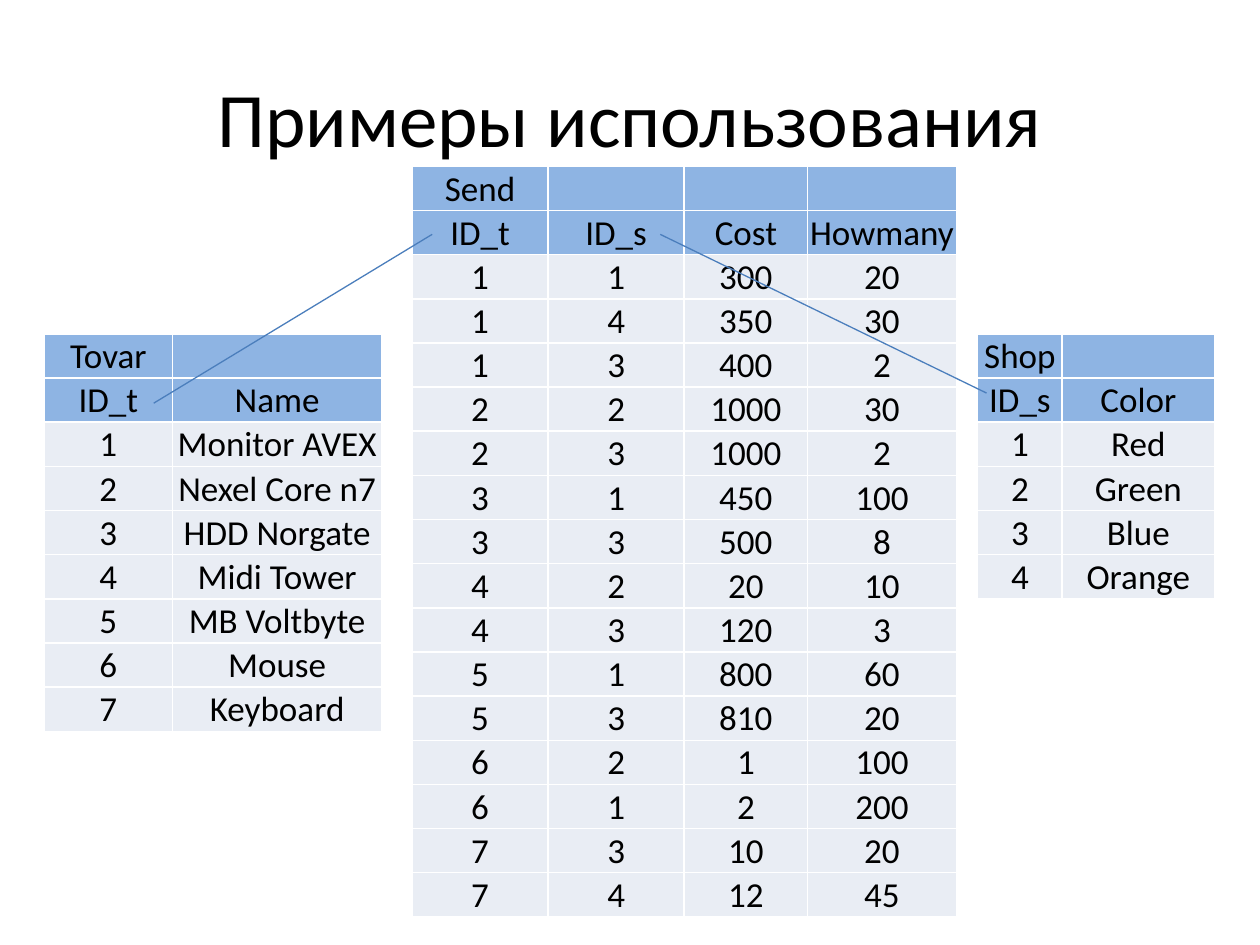
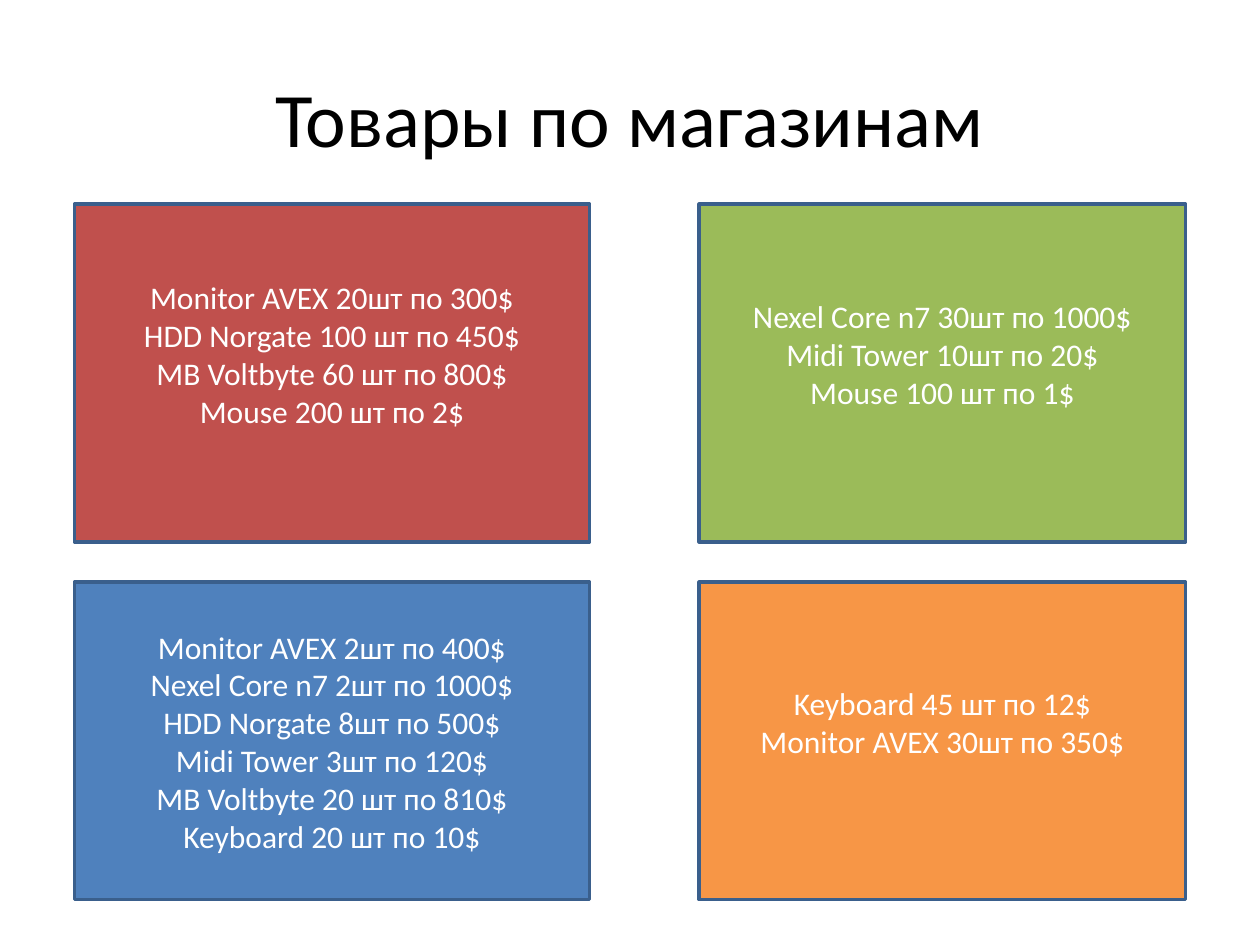
from dataclasses import dataclass

from lxml import etree
from pptx import Presentation
from pptx.dml.color import RGBColor
from pptx.enum import shapes, text
from pptx.oxml import ns
from pptx.slide import Slide
from pptx.text.text import _Paragraph as Paragraph
from pptx.util import Inches, Pt


@dataclass(frozen=True)
class Theme:
    font: str = "Calibri"
    title_size: float = 44
    table_size: float = 20
    card_size: float = 18
    ink: str = "000000"
    paper: str = "FFFFFF"
    header: str = "8EB4E3"
    row: str = "E9EDF4"
    link: str = "4B7EBC"
    card_border: str = "3A5F8C"
    red: str = "C0504D"
    green: str = "9BBB59"
    blue: str = "4F81BD"
    orange: str = "F79646"


@dataclass(frozen=True)
class Relation:
    left: float
    top: float
    columns: tuple[float, ...]
    name: str
    fields: tuple[str, ...]
    records: tuple[tuple, ...]


@dataclass(frozen=True)
class Link:
    start: tuple[float, float]
    end: tuple[float, float]


@dataclass(frozen=True)
class ShopCard:
    column: int
    row: int
    color: str
    goods: tuple[str, ...]
    trailing_space: bool = True


THEME = Theme()
ROW_HEIGHT = 0.35
HEADER_ROWS = 2
CELL_INSET = 0.01
CARD_COLUMNS = ((0.59, 4.09), (5.55, 3.86))
CARD_ROWS = ((1.62, 2.68), (4.62, 2.52))
CARD_INSET = 0.05
CARD_LINE = 0.3

MONITOR = "Monitor AVEX"
PROCESSOR = "Nexel Core n7"
DISK = "HDD Norgate"
CASE = "Midi Tower"
BOARD = "MB Voltbyte"
MOUSE = "Mouse"
KEYBOARD = "Keyboard"
PRODUCTS = (MONITOR, PROCESSOR, DISK, CASE, BOARD, MOUSE, KEYBOARD)
COLORS = ("Red", "Green", "Blue", "Orange")

RELATIONS = (
    Relation(0.35, 2.65, (1.02, 1.66), "Tovar", ("ID_t", "Name"),
             tuple(enumerate(PRODUCTS, 1))),
    Relation(3.27, 1.32, (1.08, 1.08, 0.98, 1.18), "Send",
             ("ID_t", "ID_s", "Cost", "Howmany"), (
                 (1, 1, 300, 20),
                 (1, 4, 350, 30),
                 (1, 3, 400, 2),
                 (2, 2, 1000, 30),
                 (2, 3, 1000, 2),
                 (3, 1, 450, 100),
                 (3, 3, 500, 8),
                 (4, 2, 20, 10),
                 (4, 3, 120, 3),
                 (5, 1, 800, 60),
                 (5, 3, 810, 20),
                 (6, 2, 1, 100),
                 (6, 1, 2, 200),
                 (7, 3, 10, 20),
                 (7, 4, 12, 45),
             )),
    Relation(7.76, 2.65, (0.67, 1.21), "Shop", ("ID_s", "Color"),
             tuple(enumerate(COLORS, 1))),
)

LINKS = (
    Link((1.22, 3.2), (3.43, 1.86)),
    Link((5.24, 1.86), (7.83, 3.12)),
)

SHOP_CARDS = (
    ShopCard(0, 0, THEME.red, (
        f"{MONITOR} 20шт по 300$",
        f"{DISK} 100 шт по 450$",
        f"{BOARD} 60 шт по 800$",
        f"{MOUSE} 200 шт по 2$",
    )),
    ShopCard(1, 0, THEME.green, (
        f"{PROCESSOR} 30шт по 1000$",
        f"{CASE} 10шт по 20$",
        f"{MOUSE} 100 шт по 1$",
    )),
    ShopCard(0, 1, THEME.blue, (
        f"{MONITOR} 2шт по 400$",
        f"{PROCESSOR} 2шт по 1000$",
        f"{DISK} 8шт по 500$",
        f"{CASE} 3шт по 120$",
        f"{BOARD} 20 шт по 810$",
        f"{KEYBOARD} 20 шт по 10$",
    ), trailing_space=False),
    ShopCard(1, 1, THEME.orange, (
        f"{KEYBOARD} 45 шт по 12$",
        f"{MONITOR} 30шт по 350$",
    )),
)


def rgb(color: str) -> RGBColor:
    return RGBColor.from_string(color)


def write(paragraph: Paragraph, wording: str, size: float, color: str) -> None:
    paragraph.alignment = text.PP_ALIGN.CENTER
    run = paragraph.add_run()
    run.text = wording
    run.font.name = THEME.font
    run.font.size = Pt(size)
    run.font.color.rgb = rgb(color)


def add_titled_slide(deck: Presentation, wording: str) -> Slide:
    slide = deck.slides.add_slide(deck.slide_layouts[5])
    title = slide.shapes.title
    title.left, title.top = Inches(0.5), Inches(0.3)
    title.width, title.height = Inches(9), Inches(1.25)
    title.text_frame.vertical_anchor = text.MSO_ANCHOR.MIDDLE
    write(title.text_frame.paragraphs[0], wording, THEME.title_size, THEME.ink)
    return slide


def add_borders(cell) -> None:
    properties = cell._tc.get_or_add_tcPr()
    for side in ("lnL", "lnR", "lnT", "lnB"):
        border = etree.SubElement(properties, ns.qn(f"a:{side}"), w=str(Pt(1)))
        fill = etree.SubElement(border, ns.qn("a:solidFill"))
        etree.SubElement(fill, ns.qn("a:srgbClr"), val=THEME.paper)


def add_relation(slide: Slide, relation: Relation) -> None:
    heading = (relation.name,) + ("",) * (len(relation.columns) - 1)
    rows = (heading, relation.fields) + relation.records
    table = slide.shapes.add_table(
        len(rows), len(relation.columns), Inches(relation.left), Inches(relation.top),
        Inches(sum(relation.columns)), Inches(ROW_HEIGHT * len(rows))).table
    table.first_row = table.horz_banding = False
    for column, width in zip(table.columns, relation.columns):
        column.width = Inches(width)
    for row_index, values in enumerate(rows):
        table.rows[row_index].height = Inches(ROW_HEIGHT)
        for column_index, value in enumerate(values):
            cell = table.cell(row_index, column_index)
            cell.margin_left = cell.margin_right = cell.margin_top = Inches(CELL_INSET)
            cell.margin_bottom = 0
            cell.vertical_anchor = text.MSO_ANCHOR.BOTTOM
            add_borders(cell)
            cell.fill.solid()
            cell.fill.fore_color.rgb = rgb(
                THEME.header if row_index < HEADER_ROWS else THEME.row)
            if value != "":
                write(cell.text_frame.paragraphs[0], str(value),
                      THEME.table_size, THEME.ink)


def add_link(slide: Slide, link: Link) -> None:
    connector = slide.shapes.add_connector(
        shapes.MSO_CONNECTOR.STRAIGHT,
        *(Inches(value) for value in link.start + link.end))
    connector.line.color.rgb = rgb(THEME.link)
    connector.line.width = Pt(0.75)
    etree.SubElement(connector._element.spPr, ns.qn("a:effectLst"))


def add_shop_card(slide: Slide, shop: ShopCard) -> None:
    left, width = CARD_COLUMNS[shop.column]
    top, height = CARD_ROWS[shop.row]
    card = slide.shapes.add_shape(
        shapes.MSO_SHAPE.RECTANGLE,
        Inches(left), Inches(top), Inches(width), Inches(height))
    card.shadow.inherit = False
    card.fill.solid()
    card.fill.fore_color.rgb = rgb(shop.color)
    card.line.color.rgb = rgb(THEME.card_border)
    card.line.width = Pt(2)
    frame = card.text_frame
    frame.word_wrap = True
    frame.vertical_anchor = text.MSO_ANCHOR.MIDDLE
    frame.margin_top = Inches(CARD_INSET)
    frame.margin_bottom = Inches(CARD_INSET + CARD_LINE * shop.trailing_space)
    for index, item in enumerate(shop.goods):
        paragraph = frame.add_paragraph() if index else frame.paragraphs[0]
        write(paragraph, item, THEME.card_size, THEME.paper)


def main() -> None:
    deck = Presentation()
    deck.slide_width, deck.slide_height = Inches(10), Inches(7.5)

    examples = add_titled_slide(deck, "Примеры использования")
    for relation in RELATIONS:
        add_relation(examples, relation)
    for link in LINKS:
        add_link(examples, link)

    goods_by_shop = add_titled_slide(deck, "Товары по магазинам")
    for shop in SHOP_CARDS:
        add_shop_card(goods_by_shop, shop)

    deck.save("out.pptx")


if __name__ == "__main__":
    main()
